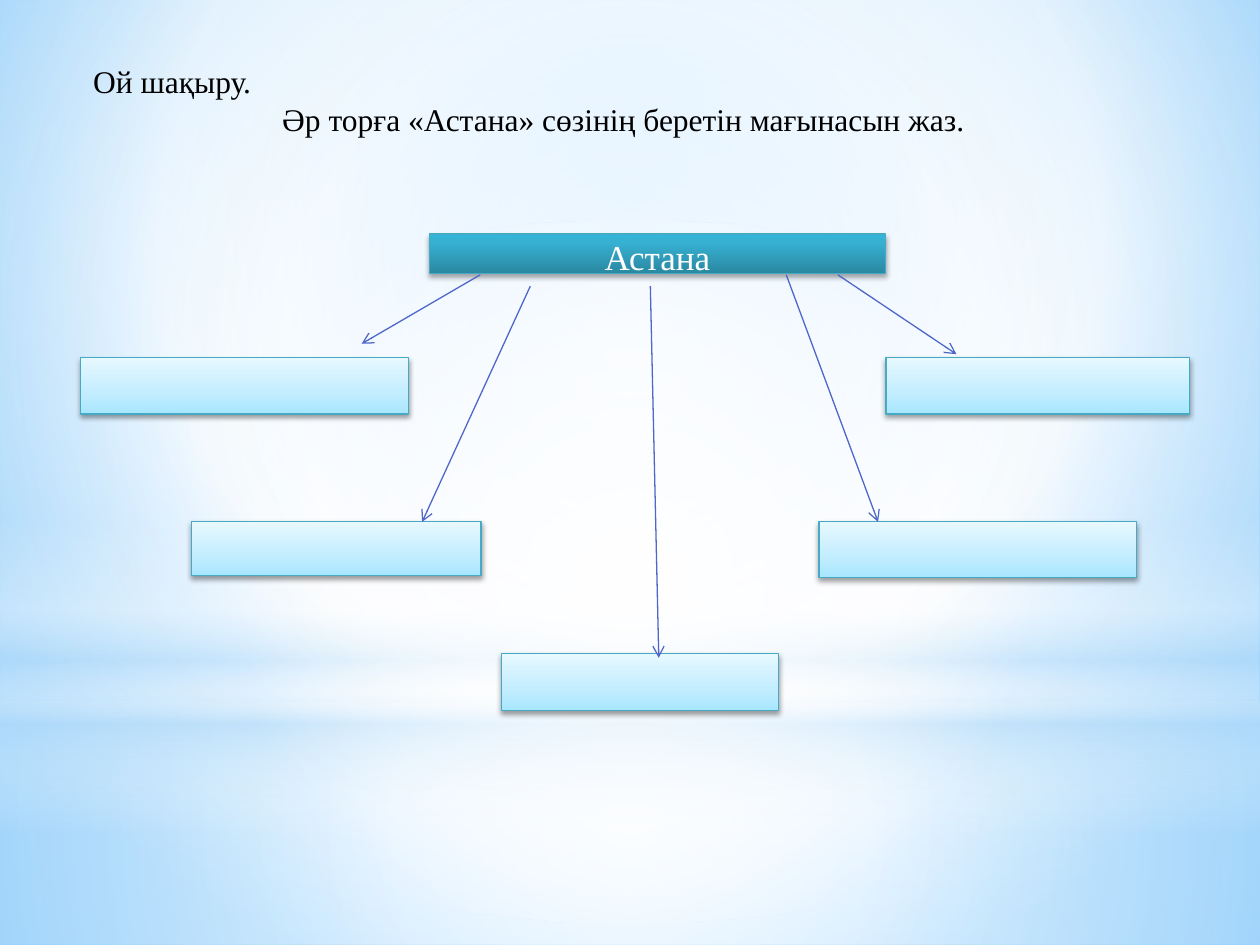
from lxml import etree
from pptx import Presentation
from pptx.dml.color import RGBColor
from pptx.enum.shapes import MSO_CONNECTOR, MSO_SHAPE
from pptx.enum.text import MSO_ANCHOR, PP_ALIGN
from pptx.oxml.ns import qn
from pptx.util import Cm, Pt

RECTANGLE, ELLIPSE = MSO_SHAPE.RECTANGLE, MSO_SHAPE.OVAL
STRAIGHT = MSO_CONNECTOR.STRAIGHT
TOP, MIDDLE = MSO_ANCHOR.TOP, MSO_ANCHOR.MIDDLE
CENTER, JUSTIFY = PP_ALIGN.CENTER, PP_ALIGN.JUSTIFY

WHITE = RGBColor(0xFF, 0xFF, 0xFF)
BLACK = RGBColor(0x00, 0x00, 0x00)
HAZE = RGBColor(0xB4, 0xDC, 0xFA)
SKY = RGBColor(0x9E, 0xD5, 0xFF)
AZURE = RGBColor(0x5B, 0xB9, 0xFF)
BORDER = RGBColor(0x46, 0xAA, 0xC5)
ARROW = RGBColor(0x4E, 0x67, 0xC8)
FONT = "Times New Roman"
PAGE_WIDTH, PAGE_HEIGHT = 25.4, 19.05
HORIZON = 14.17

# Gradient stops: position %, colour, opacity %
PAGE_STOPS = [(0, SKY, 100), (60, WHITE, 100), (100, AZURE, 100)]
GROUND_STOPS = [(0, WHITE, 91), (37, WHITE, 76), (100, HAZE, 79)]
AIR_STOPS = [(0, WHITE, 89), (48, WHITE, 62), (100, HAZE, 79)]
BAND_STOPS = [(0, WHITE, 0), (29, WHITE, 30), (45, HAZE, 40),
              (55, WHITE, 26), (65, HAZE, 60), (100, WHITE, 0)]
GLOW_STOPS = [(0, WHITE, 100), (56, WHITE, 0)]
TOPIC_STOPS = [(0, RGBColor(0x2A, 0x88, 0xA2), 100),
               (80, RGBColor(0x37, 0xB1, 0xD2), 100),
               (100, RGBColor(0x34, 0xB4, 0xD6), 100)]
ANSWER_STOPS = [(0, RGBColor(0xA7, 0xE6, 0xFF), 100),
                (35, RGBColor(0xC1, 0xED, 0xFF), 100),
                (100, RGBColor(0xE7, 0xF8, 0xFF), 100)]
CENTRE = (50, 50, 50, 50)

# Left, top, width, height in cm
TOPIC_PLACE = (8.66, 4.72, 9.19, 0.79)
ANSWER_PLACES = [
    (1.63, 7.21, 6.6, 1.14),
    (10.11, 13.18, 5.59, 1.14),
    (3.86, 10.52, 5.84, 1.09),
    (16.51, 10.52, 6.4, 1.12),
    (17.86, 7.21, 6.12, 1.14),
]
# Start x, start y, end x, end y in cm
ARROWS = [
    (9.68, 5.54, 7.29, 6.93),
    (10.69, 5.77, 8.51, 10.52),
    (13.11, 5.77, 13.28, 13.26),
    (15.85, 5.54, 17.7, 10.52),
    (16.89, 5.54, 19.28, 7.14),
]


def add_child(parent, tag, **attributes):
    child = etree.SubElement(parent, qn(tag))
    for name, value in attributes.items():
        child.set(name, str(value))
    return child


def add_colour(parent, colour, opacity):
    node = add_child(parent, "a:srgbClr", val=colour)
    if opacity < 100:
        add_child(node, "a:alpha", val=opacity * 1000)


def set_gradient(fill, owner, stops, angle=None, focus=CENTRE):
    """Set a linear gradient if an angle is given, else a circular one."""
    fill.gradient()
    gradient = next(owner.iter(qn("a:gradFill")))
    for child in list(gradient):
        gradient.remove(child)
    stop_list = add_child(gradient, "a:gsLst")
    for position, colour, opacity in stops:
        stop = add_child(stop_list, "a:gs", pos=position * 1000)
        add_colour(stop, colour, opacity)
    if angle is None:
        circle = add_child(gradient, "a:path", path="circle")
        edges = {side: edge * 1000 for side, edge in zip("ltrb", focus)}
        add_child(circle, "a:fillToRect", **edges)
    else:
        add_child(gradient, "a:lin", ang=angle * 60000, scaled=0)


def add_gradient_shape(page, kind, place, stops, angle=None):
    shape = page.shapes.add_shape(kind, *map(Cm, place))
    shape.shadow.inherit = False
    shape.line.fill.background()
    set_gradient(shape.fill, shape.element.spPr, stops, angle)
    return shape


def add_card(page, place, stops, opacity, distance):
    """Add a bordered box with a soft shadow below it."""
    card = add_gradient_shape(page, RECTANGLE, place, stops, 270)
    card.line.color.rgb = BORDER
    card.line.width = Pt(0.75)
    effects = card.element.spPr.find(qn("a:effectLst"))
    shadow = add_child(effects, "a:outerShdw", blurRad=Pt(3.1), dist=Pt(distance),
                       dir=90 * 60000, rotWithShape=0)
    add_colour(shadow, BLACK, opacity)
    return card


def format_paragraph(para, size, colour, alignment):
    para.alignment = alignment
    for span in para.runs:
        span.font.name = FONT
        span.font.size = Pt(size)
        span.font.color.rgb = colour


def add_task(page):
    box = page.shapes.add_textbox(Cm(1.63), Cm(1.12), Cm(19.46), Cm(8.59))
    frame = box.text_frame
    frame.word_wrap = True
    frame.vertical_anchor = TOP
    frame.text = "Ой шақыру.\nӘр торға «Астана» сөзінің беретін мағынасын жаз."
    for para in frame.paragraphs:
        format_paragraph(para, 18, BLACK, JUSTIFY)
    frame.paragraphs[1]._p.get_or_add_pPr().set("indent", str(Cm(3.81)))


def add_topic(page):
    topic = add_card(page, TOPIC_PLACE, TOPIC_STOPS, 35, 1.8)
    topic.text_frame.text = "Астана"
    topic.text_frame.vertical_anchor = MIDDLE
    para = topic.text_frame.paragraphs[0]
    format_paragraph(para, 20, WHITE, CENTER)
    para.line_spacing = 1.15
    para.space_after = Pt(10)


def add_arrow(page, ends):
    arrow = page.shapes.add_connector(STRAIGHT, *map(Cm, ends))
    arrow.line.color.rgb = ARROW
    arrow.line.width = Pt(0.75)
    add_child(arrow.element.spPr.find(qn("a:ln")), "a:tailEnd", type="arrow")
    add_child(arrow.element.spPr, "a:effectLst")


def add_backdrop(page):
    set_gradient(page.background.fill, page.element, PAGE_STOPS, focus=(20, 10, 20, 60))
    ground = (0, HORIZON, PAGE_WIDTH, PAGE_HEIGHT - HORIZON)
    add_gradient_shape(page, RECTANGLE, ground, GROUND_STOPS)
    add_gradient_shape(page, RECTANGLE, (0, 0, PAGE_WIDTH, HORIZON), AIR_STOPS)
    add_gradient_shape(page, RECTANGLE, (0, 10.46, PAGE_WIDTH, 6.35), BAND_STOPS, 90)
    add_gradient_shape(page, ELLIPSE, (0, 4.45, PAGE_WIDTH, HORIZON), GLOW_STOPS)


def main():
    deck = Presentation()
    deck.slide_width, deck.slide_height = Cm(PAGE_WIDTH), Cm(PAGE_HEIGHT)
    page = deck.slides.add_slide(deck.slide_layouts[6])
    add_backdrop(page)
    add_task(page)
    add_topic(page)
    for place in ANSWER_PLACES:
        add_card(page, place, ANSWER_STOPS, 38, 1.6)
    for ends in ARROWS:
        add_arrow(page, ends)
    deck.save("out.pptx")


if __name__ == "__main__":
    main()
